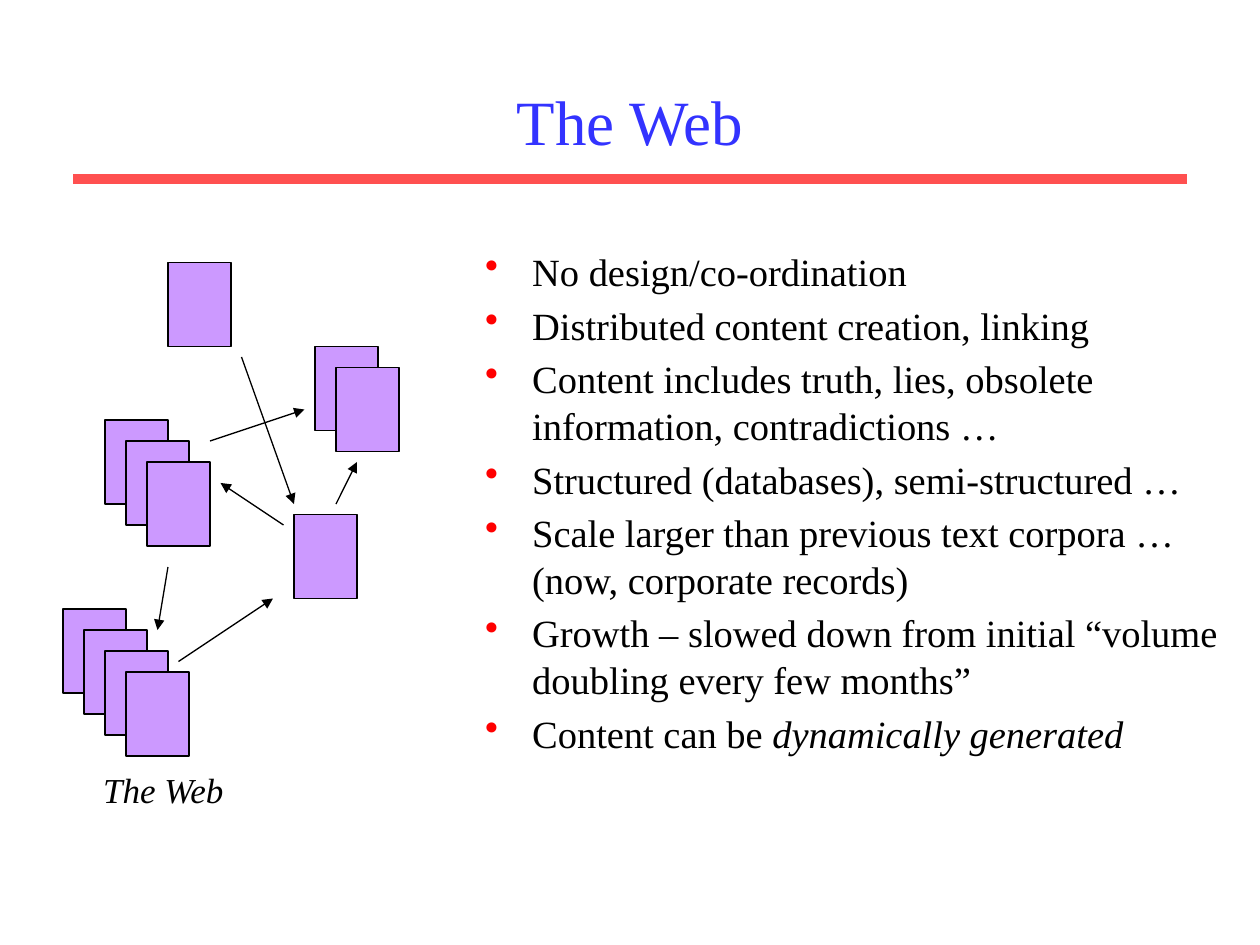
"""Build a slide on the Web: linked page stacks beside a bullet list."""
from lxml import etree
from pptx import Presentation
from pptx.dml.color import RGBColor
from pptx.enum.shapes import MSO_CONNECTOR, MSO_SHAPE
from pptx.enum.text import MSO_ANCHOR, PP_ALIGN
from pptx.oxml.ns import qn
from pptx.util import Cm, Pt

RECT = MSO_SHAPE.RECTANGLE
STRAIGHT = MSO_CONNECTOR.STRAIGHT
TOP, MIDDLE = MSO_ANCHOR.TOP, MSO_ANCHOR.MIDDLE
LEFT, CENTER = PP_ALIGN.LEFT, PP_ALIGN.CENTER

BLACK = RGBColor(0x00, 0x00, 0x00)
BLUE = RGBColor(0x33, 0x33, 0xFF)
CORAL = RGBColor(0xFF, 0x50, 0x50)
LILAC = RGBColor(0xCC, 0x99, 0xFF)
RED = RGBColor(0xFF, 0x00, 0x00)

GRID = 2.54 / 12
PAGE_W, PAGE_H, STEP = 6, 8, 2

STACKS = [(16, 25, 1), (10, 40, 3), (6, 58, 4), (28, 49, 1), (30, 33, 2)]
LINKS = [
    ((17, 63), (26, 57)),
    ((27, 50), (21, 46)),
    ((20, 42), (29, 39)),
    ((23, 34), (28, 48)),
    ((32, 48), (34, 44)),
    ((16, 54), (15, 60)),
]
POINTS = [
    [("No design/co-ordination", False)],
    [("Distributed content creation, linking", False)],
    [("Content includes truth, lies, obsolete information, contradictions …", False)],
    [("Structured (databases), semi-structured …", False)],
    [("Scale larger than previous text corpora … (now, corporate records)", False)],
    [("Growth – slowed down from initial “volume doubling every few months”", False)],
    [("Content can be ", False), ("dynamically generated", True)],
]


def cells(count):
    return Cm(count * GRID)


class Deck:
    """Holds the style and the current slide."""

    font = "Times New Roman"
    thin = Pt(0.75)

    def __init__(self):
        self.prs = Presentation()
        self.prs.slide_width, self.prs.slide_height = Cm(25.4), Cm(19.05)
        self.slide = self.prs.slides.add_slide(self.prs.slide_layouts[6])

    def text(self, box, paras, size, color, align=LEFT, anchor=TOP, bullet=None):
        frame = self.slide.shapes.add_textbox(*map(Cm, box)).text_frame
        frame.word_wrap = True
        frame.vertical_anchor = anchor
        for i, runs in enumerate(paras):
            para = frame.add_paragraph() if i else frame.paragraphs[0]
            para.alignment = align
            if bullet:
                self.bullet(para, bullet, size)
            for words, italic in runs:
                run = para.add_run()
                run.text = words
                run.font.name = self.font
                run.font.size = Pt(size)
                run.font.italic = italic
                run.font.color.rgb = color

    def bullet(self, para, color, size):
        para.space_before = Pt(size * 0.2)
        props = para._p.get_or_add_pPr()
        props.set("marL", str(Cm(0.95)))
        props.set("indent", str(-Cm(0.95)))
        tint = etree.SubElement(props, qn("a:buClr"))
        etree.SubElement(tint, qn("a:srgbClr"), val=str(color))
        etree.SubElement(props, qn("a:buChar"), char="•")

    def line(self, start, end, color, width, arrow=False):
        link = self.slide.shapes.add_connector(STRAIGHT, *start, *end)
        link.line.color.rgb = color
        link.line.width = width
        if arrow:
            etree.SubElement(link.line._get_or_add_ln(), qn("a:tailEnd"), type="triangle")
        etree.SubElement(link._element.spPr, qn("a:effectLst"))

    def page(self, x, y):
        box = (cells(n) for n in (x, y, PAGE_W, PAGE_H))
        shape = self.slide.shapes.add_shape(RECT, *box)
        shape.shadow.inherit = False
        shape.fill.solid()
        shape.fill.fore_color.rgb = LILAC
        shape.line.color.rgb = BLACK
        shape.line.width = self.thin

    def stack(self, x, y, count):
        for i in range(count):
            self.page(x + i * STEP, y + i * STEP)

    def link(self, start, end):
        self.line(map(cells, start), map(cells, end), BLACK, self.thin, arrow=True)


def main():
    deck = Deck()
    deck.line((Cm(1.48), Cm(3.61)), (Cm(23.92), Cm(3.61)), CORAL, Pt(6))
    deck.text((1.48, 1.06, 22.44, 2.75), [[("The Web", False)]], 36, BLUE, CENTER, MIDDLE)
    deck.text((9.53, 4.87, 15.87, 13.55), POINTS, 22, BLACK, bullet=RED)
    for spot in STACKS:
        deck.stack(*spot)
    for ends in LINKS:
        deck.link(*ends)
    deck.text((1.83, 15.37, 3.45, 1.1), [[("The Web", True)]], 20, BLACK)
    deck.prs.save("out.pptx")


if __name__ == "__main__":
    main()
